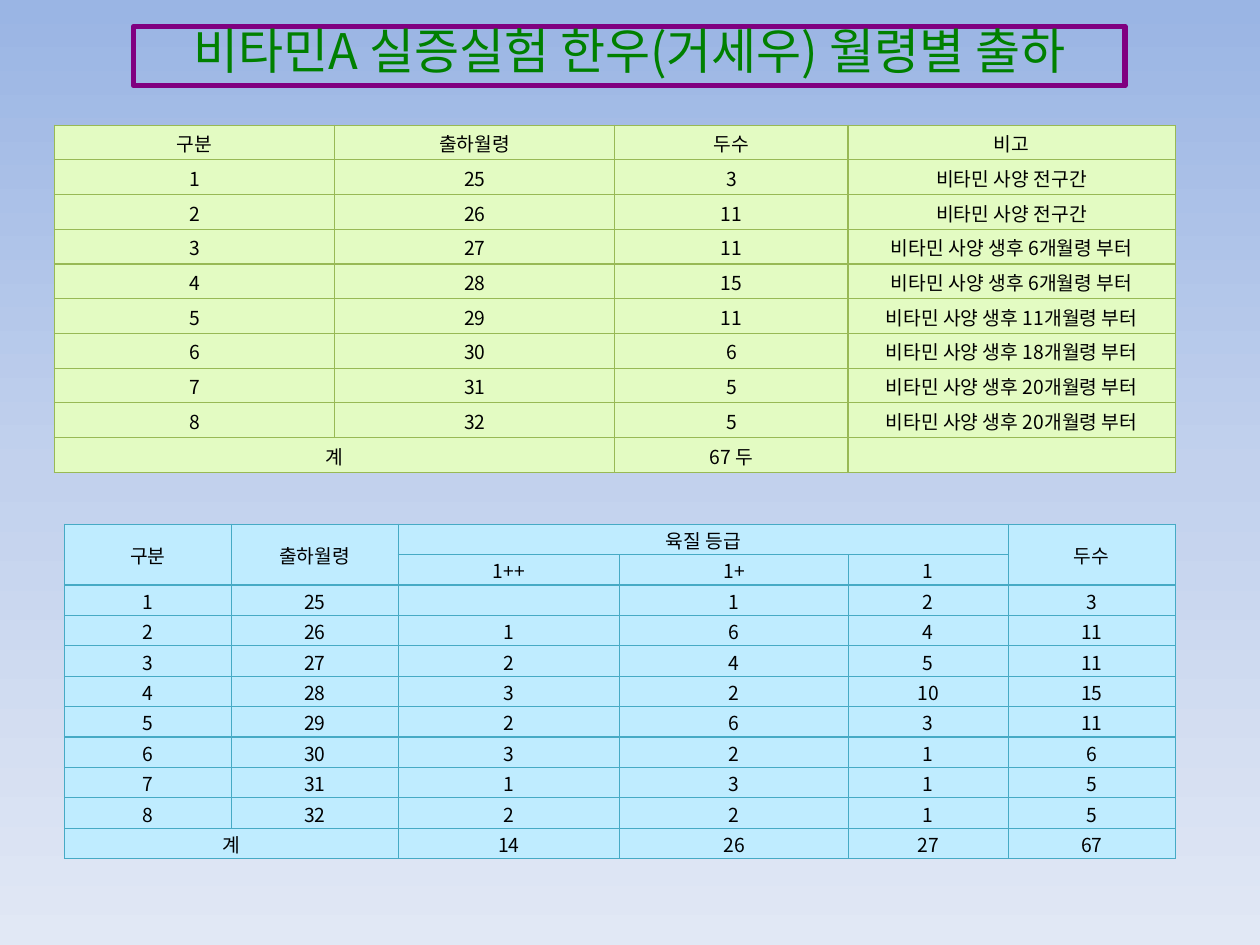
"""Build the slide on cattle shipments by age in months."""
from lxml import etree
from pptx import Presentation
from pptx.dml.color import RGBColor
from pptx.enum import text
from pptx.oxml.ns import qn
from pptx.util import Pt
from copy import deepcopy

COLORS = {
    "sky_top": "9AB5E4", "sky_middle": "C2D1ED", "sky_bottom": "E1E8F5",
    "title": "008000", "frame": "800080", "ink": "000000",
    "green": "E3FBC2", "green_line": "98B955",
    "blue": "BFECFF", "blue_line": "46AAC5",
}
TITLE_FONT = "Noto Sans CJK JP"
TABLE_FONT = "Noto Sans CJK KR"
HEADS = [3, 11, 11, 15, 11, 6, 5, 5]
START_MONTHS = [6, 6, 11, 18, 20, 20]
GRADES = [("", 1, 2), (1, 6, 4), (2, 4, 5), (3, 2, 10),
          (2, 6, 3), (3, 2, 1), (1, 3, 1), (2, 2, 1)]


def color(name):
    return RGBColor.from_string(COLORS[name])


def format_para(para, font, size, ink):
    para.alignment = text.PP_ALIGN.CENTER
    for span in para.runs:
        span.font.name = font
        span.font.size = Pt(size)
        span.font.color.rgb = color(ink)
        properties = span.font._element
        etree.SubElement(properties, qn("a:ea"), typeface=font)
    if not para.runs:
        etree.SubElement(para._p, qn("a:endParaRPr"), sz=str(size * 100))


def paint_background(page):
    fill = page.background.fill
    fill.gradient()
    fill.gradient_angle = 270
    stop_list = page.element.find(".//" + qn("a:gsLst"))
    stop_list.insert(1, deepcopy(stop_list[0]))
    names = ("sky_top", "sky_middle", "sky_bottom")
    for index, (stop, name) in enumerate(zip(fill.gradient_stops, names)):
        stop.position = index / 2
        stop.color.rgb = color(name)


def add_title(page, words):
    box = page.shapes.title
    box.left, box.top, box.width, box.height = Pt(76.3), Pt(15), Pt(566.6), Pt(34)
    box.line.color.rgb = color("frame")
    box.line.width = Pt(3)
    frame = box.text_frame
    frame.text = words
    frame.word_wrap = True
    frame.auto_size = text.MSO_AUTO_SIZE.NONE
    frame.vertical_anchor = text.MSO_ANCHOR.MIDDLE
    para = frame.paragraphs[0]
    para.line_spacing = 0.75
    format_para(para, TITLE_FONT, 28, "title")


def add_borders(cell, name):
    properties = cell._tc.get_or_add_tcPr()
    for index, side in enumerate(("lnL", "lnR", "lnT", "lnB")):
        line = etree.Element(qn("a:" + side), w=str(Pt(0.75)))
        solid = etree.SubElement(line, qn("a:solidFill"))
        etree.SubElement(solid, qn("a:srgbClr"), val=COLORS[name])
        properties.insert(index, line)


def format_cell(cell, value, tint):
    cell.text_frame.text = str(value)
    cell.vertical_anchor = text.MSO_ANCHOR.MIDDLE
    cell.margin_left = cell.margin_right = cell.margin_top = Pt(0.7)
    cell.margin_bottom = 0
    format_para(cell.text_frame.paragraphs[0], TABLE_FONT, 11, "ink")
    cell.fill.solid()
    cell.fill.fore_color.rgb = color(tint)
    add_borders(cell, tint + "_line")


def add_grid(page, left, top, widths, row_height, rows, merges, tint):
    table = page.shapes.add_table(
        len(rows), len(widths), Pt(left), Pt(top),
        Pt(sum(widths)), Pt(row_height * len(rows))).table
    table.first_row = table.horz_banding = False
    for column, width in zip(table.columns, widths):
        column.width = Pt(width)
    for row_index, values in enumerate(rows):
        table.rows[row_index].height = Pt(row_height)
        for column_index, value in enumerate(values):
            format_cell(table.cell(row_index, column_index), value, tint)
    for first, last in merges:
        table.cell(*first).merge(table.cell(*last))


def shipment_rows():
    notes = ["비타민 사양 전구간"] * 2
    notes += [f"비타민 사양 생후 {month}개월령 부터" for month in START_MONTHS]
    body = [(number, 24 + number, heads, note)
            for number, (heads, note) in enumerate(zip(HEADS, notes), 1)]
    return [("구분", "출하월령", "두수", "비고"), *body,
            ("계", "", f"{sum(HEADS)} 두", "")]


def grade_rows():
    body = [(number, 24 + number, *grades, heads)
            for number, (grades, heads) in enumerate(zip(GRADES, HEADS), 1)]
    totals = [sum(value or 0 for value in column) for column in zip(*GRADES)]
    return [("구분", "출하월령", "육질 등급", "", "", "두수"),
            ("", "", "1++", "1+", "1", ""), *body,
            ("계", "", *totals, sum(HEADS))]


def main():
    deck = Presentation()
    deck.slide_width, deck.slide_height = Pt(720), Pt(540)
    page = deck.slides.add_slide(deck.slide_layouts[5])
    paint_background(page)
    add_grid(page, 31, 71.5, [160.2, 160.2, 133.2, 187], 19.85,
             shipment_rows(), [((9, 0), (9, 1))], "green")
    add_title(page, "비타민A 실증실험 한우(거세우) 월령별 출하")
    add_grid(page, 36.8, 299.5, [95.4, 95.4, 126.6, 130.6, 91.4, 95.4], 17.4,
             grade_rows(),
             [((0, 0), (1, 0)), ((0, 1), (1, 1)), ((0, 2), (0, 4)),
              ((0, 5), (1, 5)), ((10, 0), (10, 1))], "blue")
    deck.save("out.pptx")


if __name__ == "__main__":
    main()
